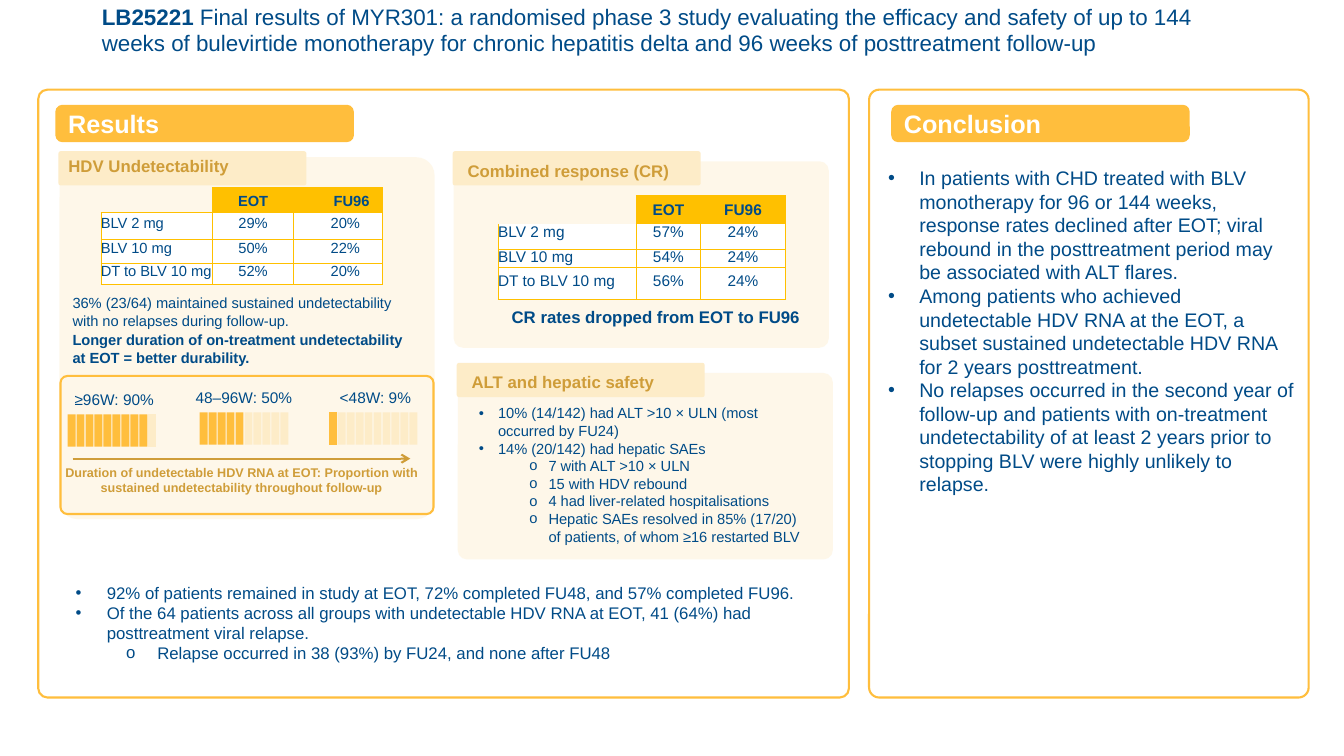
from dataclasses import dataclass

from lxml import etree
from pptx import Presentation
from pptx.dml.color import RGBColor
from pptx.enum import shapes as kinds, text as texts
from pptx.oxml.ns import qn
from pptx.util import Inches, Pt

NAVY = RGBColor(0x00, 0x4B, 0x87)
AMBER = RGBColor(0xFF, 0xBE, 0x3D)
GOLD = RGBColor(0xFF, 0xC0, 0x00)
OCHRE = RGBColor(0xCF, 0x9D, 0x39)
CREAM = RGBColor(0xFD, 0xEC, 0xC8)
WHITE = RGBColor(0xFF, 0xFF, 0xFF)
LEFT, CENTER = texts.PP_ALIGN.LEFT, texts.PP_ALIGN.CENTER
TOP, MIDDLE = texts.MSO_ANCHOR.TOP, texts.MSO_ANCHOR.MIDDLE
NO_GRID_STYLE = "{2D5ABB26-0587-4C30-8999-92F81FD0307C}"
PADDED = (0.1, 0.05)
TIGHT = (0, 0.01)


@dataclass
class Box:
    left: float
    top: float
    width: float
    height: float

    def emu(self) -> list[int]:
        return [Inches(v) for v in (self.left, self.top, self.width, self.height)]


@dataclass
class Para:
    text: str
    lead: str = ""  # bold opening words
    bold: bool = False
    bullet: str = ""
    indent: float = 0
    hang: float = 0
    before: float = 0


@dataclass
class ResponseTable:
    box: Box
    columns: list[float]
    rows: list[float]
    row_insets: list[float]
    size: float
    cells: list[list[str]]
    corner_sides: str
    last_indents: list[float]  # left indent of the last column; empty when centred


@dataclass
class Gauge:
    label: str
    label_box: Box
    left: float
    top: float
    filled: int


def rounded(box: Box, adjust: float, fill: RGBColor | None = None,
            line: RGBColor | None = None, alpha: int = 100):
    shape = slide.shapes.add_shape(kinds.MSO_SHAPE.ROUNDED_RECTANGLE, *box.emu())
    shape.adjustments[0] = adjust
    shape.shadow.inherit = False
    if fill is None:
        shape.fill.background()
    else:
        shape.fill.solid()
        shape.fill.fore_color.rgb = fill
        if alpha < 100:
            color = shape.fill._xPr.find(qn("a:solidFill"))[0]
            etree.SubElement(color, qn("a:alpha"), val=str(alpha * 1000))
    if line is None:
        shape.line.fill.background()
    else:
        shape.line.color.rgb = line
        shape.line.width = Pt(1.5)
    return shape


def style(paragraph, size: float, color: RGBColor, bold: bool, align=LEFT) -> None:
    paragraph.alignment = align
    font = paragraph.font
    font.name, font.size, font.bold = "Arial", Pt(size), bold
    font.color.rgb = color


def write(frame, paras: list[Para], size: float, color: RGBColor = NAVY, align=LEFT,
          insets: tuple[float, float] = TIGHT, anchor=TOP, spacing: float = 0) -> None:
    frame.word_wrap = True
    frame.vertical_anchor = anchor
    frame.margin_left = frame.margin_right = Inches(insets[0])
    frame.margin_top = Inches(insets[1])
    frame.margin_bottom = Inches(insets[1] if insets == PADDED else 0)
    for number, para in enumerate(paras):
        paragraph = frame.add_paragraph() if number else frame.paragraphs[0]
        if para.before:
            paragraph.space_before = Pt(para.before)
        if spacing:
            paragraph.line_spacing = Pt(spacing)
        properties = paragraph._p.get_or_add_pPr()
        properties.set("marL", str(Inches(para.indent)))
        properties.set("indent", str(-Inches(para.hang)))
        if para.bullet:
            etree.SubElement(properties, qn("a:buFont"), typeface="Arial")
            etree.SubElement(properties, qn("a:buChar"), char=para.bullet)
        style(paragraph, size, color, para.bold, align)
        if para.lead:
            lead = paragraph.add_run()
            lead.text, lead.font.bold = para.lead, True
        paragraph.add_run().text = para.text


def textbox(box: Box, paras: list[Para], size: float, **options) -> None:
    write(slide.shapes.add_textbox(*box.emu()).text_frame, paras, size, **options)


def section(frame_box: Box, adjust: float, heading: str, heading_left: float) -> None:
    """Outlined column with its amber heading."""
    rounded(frame_box, adjust, line=AMBER)
    banner = rounded(Box(heading_left, 1.05, 2.94, 0.35), 0.17, AMBER, AMBER)
    write(banner.text_frame, [Para(heading, bold=True)], 18, color=WHITE,
          insets=PADDED, anchor=MIDDLE)


def panel(box: Box, tab: Box, title: str, title_box: Box) -> None:
    """Tinted panel with a titled tab."""
    rounded(box, 0.05, CREAM, alpha=39)
    rounded(tab, 0.07, CREAM)
    textbox(title_box, [Para(title, bold=True)], 12, color=OCHRE,
            insets=PADDED, anchor=MIDDLE)


def border(cell, sides: str) -> None:
    properties = cell._tc.get_or_add_tcPr()
    for position, side in enumerate(s for s in "LRTB" if s in sides):
        line = etree.Element(qn(f"a:ln{side}"), w=str(Pt(0.5)))
        fill = etree.SubElement(line, qn("a:solidFill"))
        etree.SubElement(fill, qn("a:srgbClr"), val=str(GOLD))
        properties.insert(position, line)


def response_table(data: ResponseTable) -> None:
    table = slide.shapes.add_table(len(data.rows), len(data.columns), *data.box.emu()).table
    table._tbl.tblPr.find(qn("a:tableStyleId")).text = NO_GRID_STYLE
    table.first_row = table.horz_banding = False
    for column, width in zip(table.columns, data.columns):
        column.width = Inches(width)
    for r, (height, values) in enumerate(zip(data.rows, data.cells)):
        table.rows[r].height = Inches(height)
        for c, value in enumerate(values):
            cell = table.cell(r, c)
            cell.margin_left = cell.margin_right = cell.margin_bottom = 0
            cell.margin_top = Inches(data.row_insets[r])
            cell.vertical_anchor = TOP if r else MIDDLE
            paragraph = cell.text_frame.paragraphs[0]
            if not value:
                cell.fill.background()
                border(cell, data.corner_sides)
                etree.SubElement(paragraph._p, qn("a:endParaRPr"), sz=str(int(data.size * 100)))
                continue
            cell.fill.solid()
            cell.fill.fore_color.rgb = WHITE if r else GOLD
            border(cell, "LRB" if r else "LRTB")
            indented = c == 2 and data.last_indents
            if indented:
                paragraph._p.get_or_add_pPr().set("marL", str(Inches(data.last_indents[r])))
            style(paragraph, data.size, NAVY, r == 0, CENTER if c and not indented else LEFT)
            paragraph.add_run().text = value


def bars(left: float, top: float, first: int, last: int, color: RGBColor) -> None:
    pitch, width, height = 0.089, 0.079, 0.32
    builder = None
    for n in range(first, last):
        x0, x1 = Inches(left + n * pitch), Inches(left + n * pitch + width)
        y0, y1 = Inches(top), Inches(top + height)
        if builder is None:
            builder = slide.shapes.build_freeform(x0, y0)
        else:
            builder.move_to(x0, y0)
        builder.add_line_segments([(x1, y0), (x1, y1), (x0, y1)], close=True)
    shape = builder.convert_to_shape()
    shape.shadow.inherit = False
    shape.fill.solid()
    shape.fill.fore_color.rgb = color
    shape.line.fill.background()


def duration_arrow() -> None:
    arrow = slide.shapes.add_connector(kinds.MSO_CONNECTOR.STRAIGHT, Inches(0.72),
                                       Inches(4.55), Inches(4.07), Inches(4.55))
    arrow.line.color.rgb = OCHRE
    arrow.line.width = Pt(1.5)
    etree.SubElement(arrow.line._get_or_add_ln(), qn("a:tailEnd"), type="arrow")
    etree.SubElement(arrow._element.spPr, qn("a:effectLst"))


def bullet(text: str, indent: float, hang: float, mark: str = "•") -> Para:
    return Para(text, bullet=mark, indent=indent, hang=hang)


UNDETECTABILITY = ResponseTable(
    Box(1, 1.86, 2.79, 0.96), [1.11, 0.8, 0.88], [0.25, 0.26, 0.24, 0.21],
    [0.02, 0.03, 0.01, 0], 10.5,
    [["", "EOT", "FU96"], ["BLV 2 mg", "29%", "20%"],
     ["BLV 10 mg", "50%", "22%"], ["DT to BLV 10 mg", "52%", "20%"]],
    "RB", [0.4, 0.37, 0.37, 0.37])
COMBINED = ResponseTable(
    Box(4.94, 1.94, 2.85, 1.02), [1.37, 0.64, 0.84], [0.28, 0.25, 0.17, 0.32],
    [0, 0, 0, 0.05], 11,
    [["", "EOT", "FU96"], ["BLV 2 mg", "57%", "24%"],
     ["BLV 10 mg", "54%", "24%"], ["DT to BLV 10 mg", "56%", "24%"]],
    "", [])
GAUGES = [
    Gauge("≥96W: 90%", Box(0.73, 3.86, 0.84, 0.21), 0.67, 4.11, 9),
    Gauge("48–96W: 50%", Box(1.93, 3.84, 1.02, 0.21), 1.98, 4.09, 5),
    Gauge("<48W: 9%", Box(3.36, 3.84, 0.76, 0.21), 3.26, 4.09, 1),
]

prs = Presentation()
prs.slide_width, prs.slide_height = Inches(13.33), Inches(7.5)
slide = prs.slides.add_slide(prs.slide_layouts[6])

textbox(Box(1, 0.04, 10.87, 0.53), [
    Para("Final results of MYR301: a randomised phase 3 study evaluating the efficacy "
         "and safety of up to 144", lead="LB25221 ", indent=0.01),
    Para("weeks of bulevirtide monotherapy for chronic hepatitis delta and 96 weeks of "
         "posttreatment follow-up", indent=0.01)], 16, spacing=18.2)

section(Box(0.38, 0.89, 8.04, 6.03), 0.015, "Results", 0.56)
panel(Box(0.59, 1.56, 3.72, 3.59), Box(0.58, 1.5, 2.46, 0.34),
      "HDV Undetectability", Box(0.58, 1.5, 1.91, 0.3))
response_table(UNDETECTABILITY)
textbox(Box(0.71, 2.91, 3.43, 0.73), [
    Para("36% (23/64) maintained sustained undetectability with no relapses during "
         "follow-up.", indent=0.01),
    Para("Longer duration of on-treatment undetectability at EOT = better durability.",
         bold=True, indent=0.01, before=1)], 10.5)

rounded(Box(0.6, 3.73, 3.7, 1.37), 0.05, line=AMBER)
for gauge in GAUGES:
    textbox(gauge.label_box, [Para(gauge.label, indent=0.01)], 11)
    bars(gauge.left, gauge.top, 0, gauge.filled, AMBER)
    bars(gauge.left, gauge.top, gauge.filled, 10, CREAM)
duration_arrow()
textbox(Box(0.53, 4.6, 3.72, 0.32), [
    Para("Duration of undetectable HDV RNA at EOT: Proportion with sustained "
         "undetectability throughout follow-up", bold=True, indent=0.01)],
    9, color=OCHRE, align=CENTER)

panel(Box(4.5, 1.6, 3.72, 1.85), Box(4.49, 1.5, 2.46, 0.34),
      "Combined response (CR)", Box(4.54, 1.54, 2.4, 0.3))
response_table(COMBINED)
textbox(Box(4.79, 3.03, 3.42, 0.22),
        [Para("CR rates dropped from EOT to FU96", bold=True, indent=0.01)], 12, align=CENTER)

panel(Box(4.54, 3.7, 3.72, 1.85), Box(4.53, 3.6, 2.46, 0.34),
      "ALT and hepatic safety", Box(4.58, 3.64, 2.4, 0.3))
textbox(Box(4.74, 4, 3.32, 1.43), [
    bullet("10% (14/142) had ALT >10 × ULN (most occurred by FU24)", 0.2, 0.19),
    bullet("14% (20/142) had hepatic SAEs", 0.2, 0.19),
    *(bullet(event, 0.7, 0.19, "o") for event in (
        "7 with ALT >10 × ULN", "15 with HDV rebound",
        "4 had liver-related hospitalisations",
        "Hepatic SAEs resolved in 85% (17/20) of patients, of whom ≥16 restarted BLV"))], 10.5)

textbox(Box(0.73, 5.77, 7.41, 0.82), [
    bullet("92% of patients remained in study at EOT, 72% completed FU48, and 57% "
           "completed FU96.", 0.33, 0.31),
    bullet("Of the 64 patients across all groups with undetectable HDV RNA at EOT, "
           "41 (64%) had posttreatment viral relapse.", 0.33, 0.31),
    bullet("Relapse occurred in 38 (93%) by FU24, and none after FU48", 0.83, 0.31, "o")], 12)

section(Box(8.62, 0.89, 4.36, 6.03), 0.023, "Conclusion", 8.85)
textbox(Box(8.71, 1.6, 4.27, 3.4), [bullet(finding, 0.31, 0.31) for finding in (
    "In patients with CHD treated with BLV monotherapy for 96 or 144 weeks, response rates "
    "declined after EOT; viral rebound in the posttreatment period may be associated with "
    "ALT flares.",
    "Among patients who achieved undetectable HDV RNA at the EOT, a subset sustained "
    "undetectable HDV RNA for 2 years posttreatment.",
    "No relapses occurred in the second year of follow-up and patients with on-treatment "
    "undetectability of at least 2 years prior to stopping BLV were highly unlikely to "
    "relapse.")], 14, insets=PADDED)

prs.save("out.pptx")
